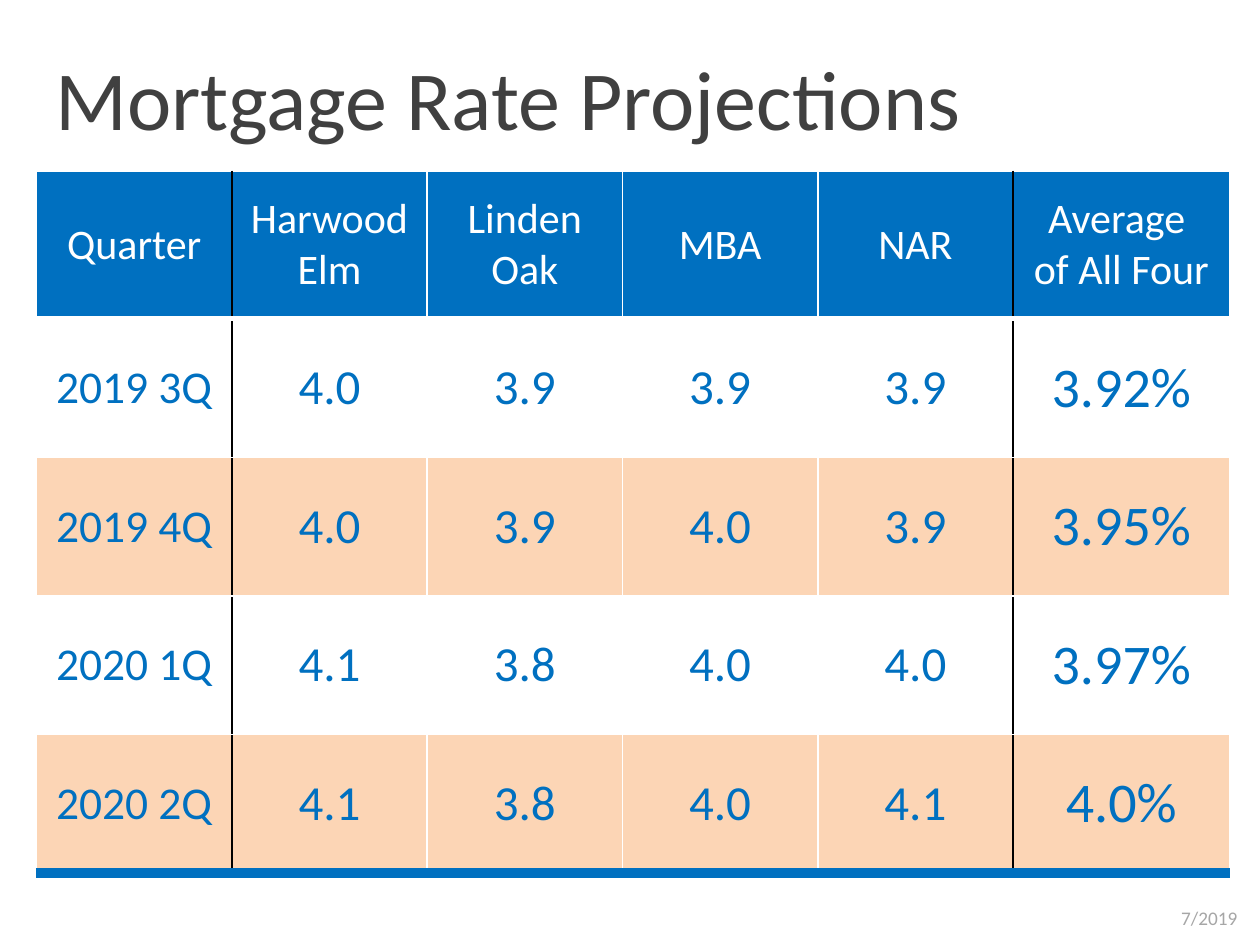
from lxml import etree
from pptx import Presentation
from pptx.dml.color import RGBColor
from pptx.enum.text import MSO_ANCHOR, MSO_AUTO_SIZE, PP_ALIGN
from pptx.oxml.ns import qn
from pptx.util import Inches, Pt

BLUE = RGBColor(0x00, 0x70, 0xC0)
PEACH = RGBColor(0xFC, 0xD5, 0xB5)
WHITE = RGBColor(0xFF, 0xFF, 0xFF)
BLACK = RGBColor(0x00, 0x00, 0x00)
DARK_GRAY = RGBColor(0x40, 0x40, 0x40)
LIGHT_GRAY = RGBColor(0xA6, 0xA6, 0xA6)


def style_text(para, size, color, align):
    para.alignment = align
    para.font.name = "Calibri"
    para.font.size = Pt(size)
    para.font.color.rgb = color


def set_borders(cell, borders):
    """Borders are (color, points) pairs: left, right, top, bottom."""
    properties = cell._tc.get_or_add_tcPr()
    for index, (side, (color, points)) in enumerate(zip("LRTB", borders)):
        line = etree.Element(qn(f"a:ln{side}"), w=str(Pt(points)))
        fill = etree.SubElement(line, qn("a:solidFill"))
        etree.SubElement(fill, qn("a:srgbClr"), val=str(color))
        properties.insert(index, line)


deck = Presentation()
deck.slide_width, deck.slide_height = Inches(10), Inches(7.5)
page = deck.slides.add_slide(deck.slide_layouts[5])

# Title
title = page.shapes.title
title.left, title.top = Inches(0.34), Inches(0.32)
title.width, title.height = Inches(8.67), Inches(0.91)
title.text_frame.text = "Mortgage Rate Projections"
title.text_frame.vertical_anchor = MSO_ANCHOR.TOP
title.text_frame.auto_size = MSO_AUTO_SIZE.SHAPE_TO_FIT_TEXT
style_text(title.text_frame.paragraphs[0], 48, DARK_GRAY, PP_ALIGN.LEFT)

# Date
date_box = page.shapes.add_textbox(Inches(8.6), Inches(7.14), Inches(1.32), Inches(0.29))
date_box.text_frame.word_wrap = True
date_box.text_frame.auto_size = MSO_AUTO_SIZE.SHAPE_TO_FIT_TEXT
date_box.text_frame.text = "7/2019"
style_text(date_box.text_frame.paragraphs[0], 11, LIGHT_GRAY, PP_ALIGN.RIGHT)

# Rate table
rates = [
    ["Quarter", "Harwood Elm", "Linden Oak", "MBA", "NAR", "Average \nof All Four"],
    ["2019 3Q", "4.0", "3.9", "3.9", "3.9", "3.92%"],
    ["2019 4Q", "4.0", "3.9", "4.0", "3.9", "3.95%"],
    ["2020 1Q", "4.1", "3.8", "4.0", "4.0", "3.97%"],
    ["2020 2Q", "4.1", "3.8", "4.0", "4.1", "4.0%"],
]
column_widths = [1.55] * 5 + [1.72]
row_heights = [1.17] + [1.1] * 4
column_sizes = [26] + [28] * 4 + [32]
row_fills = [BLUE, WHITE, PEACH, WHITE, PEACH]
# Lines between columns and between rows, outer edges included
column_lines = [(BLACK if edge in (1, 5) else WHITE, 1) for edge in range(7)]
row_lines = [(WHITE, 1), (WHITE, 3), (WHITE, 1), (WHITE, 1), (WHITE, 1), (BLUE, 6)]

table = page.shapes.add_table(
    len(rates), len(column_widths), Inches(0.29), Inches(1.36),
    Inches(sum(column_widths)), Inches(sum(row_heights))).table
for column, width in zip(table.columns, column_widths):
    column.width = Inches(width)

for r, values in enumerate(rates):
    table.rows[r].height = Inches(row_heights[r])
    for c, value in enumerate(values):
        cell = table.cell(r, c)
        cell.text = value
        cell.vertical_anchor = MSO_ANCHOR.MIDDLE
        cell.margin_left = cell.margin_right = Inches(0.1)
        cell.margin_top = cell.margin_bottom = Inches(0.07)
        cell.fill.solid()
        cell.fill.fore_color.rgb = row_fills[r]
        set_borders(cell, [column_lines[c], column_lines[c + 1],
                           row_lines[r], row_lines[r + 1]])
        for para in cell.text_frame.paragraphs:
            para.font.bold = False
            style_text(para, 24 if r == 0 else column_sizes[c],
                       WHITE if r == 0 else BLUE, PP_ALIGN.CENTER)

deck.save("out.pptx")
